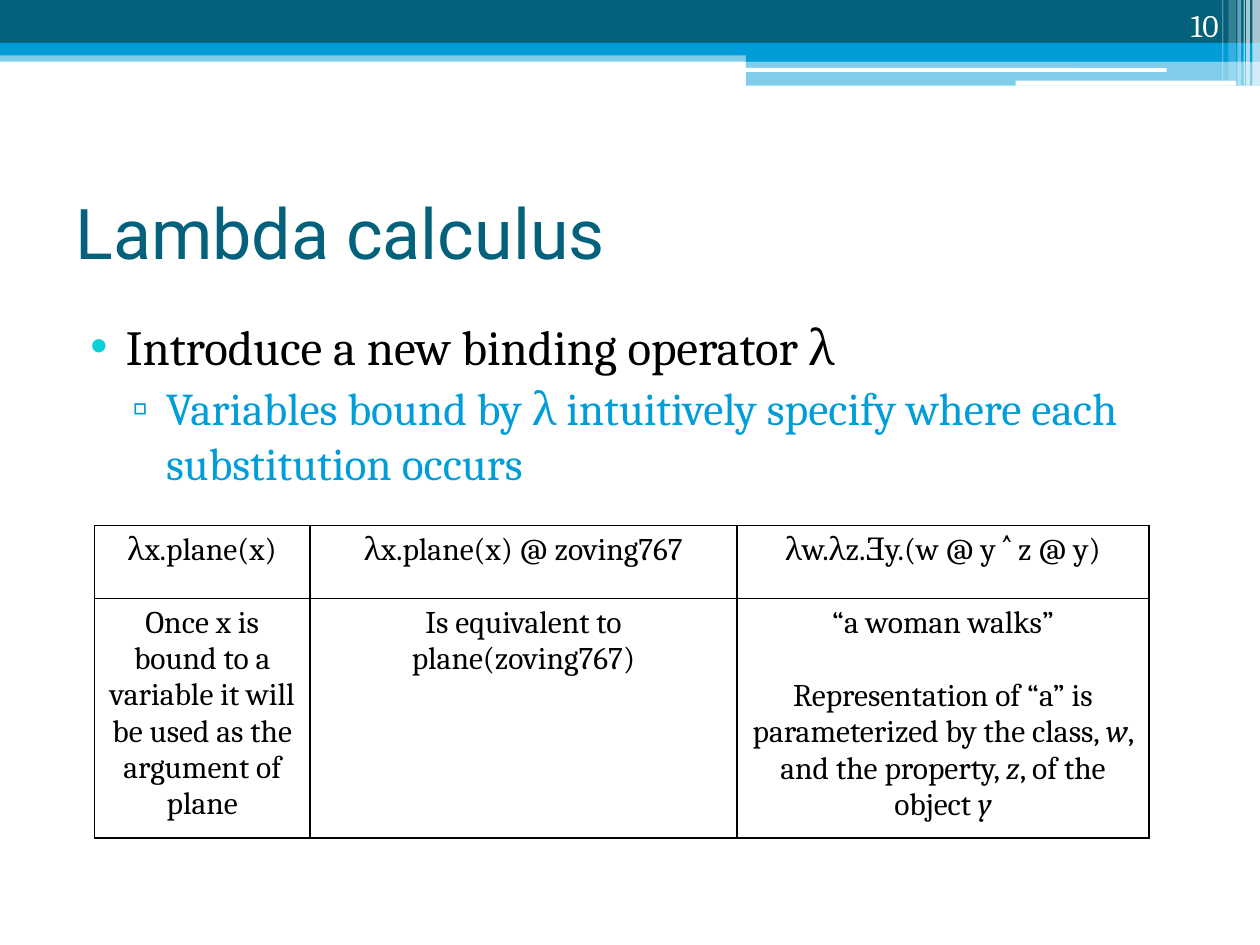
from lxml.etree import SubElement
from pptx import Presentation
from pptx.dml.color import RGBColor
from pptx.enum.shapes import MSO_SHAPE
from pptx.enum.text import MSO_ANCHOR, PP_ALIGN
from pptx.oxml.ns import qn
from pptx.util import Inches, Pt

GRID = Inches(0.1)
COLUMNS, ROWS = 100, 75
TEAL, BLUE, CYAN = "04617B", "009DD9", "0BD0D9"
WHITE, BLACK = "FFFFFF", "000000"
SERIF, SANS = "Cambria", "Roboto"

BANDS = [
    (0, 4, 100, 0.9, BLUE, 50),
    (0, 0, 100, 3.4, TEAL, 100),
    (0, 3.4, 100, 1, BLUE, 100),
    (59.2, 3.9, 40.8, 1, BLUE, 100),
    (59.2, 4.8, 40.8, 2, BLUE, 50),
]
PILLS = [(59.1, 5.4, 33.5, 0.3), (80.6, 6.4, 17.5, 0.4)]
STRIPES = [
    (99.4, 0.6, 6.8, 65),
    (98.9, 0.3, 6.8, 65),
    (98.7, 0.1, 6.8, 60),
    (98.2, 0.3, 6.8, 40),
    (97.5, 0.6, 6.4, 20),
    (97, 0.1, 6.4, 30),
]
POINTS = [
    ("Introduce a new binding operator λ", 0, 28, BLACK, "•", CYAN, 0.4, -0.28),
    ("Variables bound by λ intuitively specify where each substitution occurs",
     1, 26, BLUE, "▫", BLUE, 0.72, -0.27),
]
EXAMPLES = [
    [
        [["λx.plane(x)"]],
        [["λx.plane(x) @ zoving767"]],
        [["λw.λz.Ǝy.(w @ y ˄ z @ y)"]],
    ],
    [
        [["Once x is bound to a variable it will be used as the argument of plane"]],
        [["Is equivalent to plane(zoving767)"]],
        [
            ["“a woman walks”"],
            ["Representation of “a” is parameterized by the class, ", "w",
             ", and the property, ", "z", ", of the object ", "y"],
        ],
    ],
]


def color(value):
    return RGBColor.from_string(value)


def emu(*lengths):
    return [round(length * GRID) for length in lengths]


def add_run(paragraph, text, size, ink, face=SERIF, italic=False):
    run = paragraph.add_run()
    run.text = text
    font = run.font
    font.size, font.name, font.italic = Pt(size), face, italic
    font.color.rgb = color(ink)


def add_frame(slide, box, anchor):
    frame = slide.shapes.add_textbox(*emu(*box)).text_frame
    frame.word_wrap = True
    frame.vertical_anchor = anchor
    return frame


def add_bar(slide, kind, box, fill, opacity=100):
    bar = slide.shapes.add_shape(kind, *emu(*box))
    bar.shadow.inherit = False
    bar.line.fill.background()
    bar.fill.solid()
    bar.fill.fore_color.rgb = color(fill)
    if opacity < 100:
        tone = bar.fill._xPr.find(qn("a:solidFill"))[0]
        SubElement(tone, qn("a:alpha"), val=str(opacity * 1000))


def add_banner(slide, box):
    left, top, _, _ = box
    for x, y, width, height, fill, opacity in BANDS:
        add_bar(slide, MSO_SHAPE.RECTANGLE, (left + x, top + y, width, height), fill, opacity)
    for x, y, width, height in PILLS:
        add_bar(slide, MSO_SHAPE.ROUNDED_RECTANGLE, (left + x, top + y, width, height), WHITE)
    for x, width, height, opacity in STRIPES:
        add_bar(slide, MSO_SHAPE.RECTANGLE, (left + x, top, width, height), WHITE, opacity)


def add_title(slide, box):
    frame = add_frame(slide, box, MSO_ANCHOR.MIDDLE)
    add_run(frame.paragraphs[0], "Lambda calculus", 40, TEAL, SANS)


def add_page_number(slide, box):
    number = add_frame(slide, box, MSO_ANCHOR.BOTTOM).paragraphs[0]
    number.alignment = PP_ALIGN.RIGHT
    add_run(number, "10", 18, WHITE)


def add_bullet(paragraph, mark, tint, margin, indent):
    properties = paragraph._p.get_or_add_pPr()
    properties.set("marL", str(Inches(margin)))
    properties.set("indent", str(Inches(indent)))
    bullet_color = SubElement(properties, qn("a:buClr"))
    SubElement(bullet_color, qn("a:srgbClr"), val=tint)
    SubElement(properties, qn("a:buFont"), typeface="Arial")
    SubElement(properties, qn("a:buChar"), char=mark)


def add_points(slide, box):
    frame = add_frame(slide, box, MSO_ANCHOR.TOP)
    for index, (text, level, size, ink, mark, tint, margin, indent) in enumerate(POINTS):
        point = frame.add_paragraph() if index else frame.paragraphs[0]
        point.level = level
        point.space_before = Pt(3)
        add_bullet(point, mark, tint, margin, indent)
        add_run(point, text, size, ink)


def add_borders(cell):
    properties = cell._tc.get_or_add_tcPr()
    for position, side in enumerate(("a:lnL", "a:lnR", "a:lnT", "a:lnB")):
        border = properties.makeelement(qn(side), {"w": str(Pt(1))})
        stroke = SubElement(border, qn("a:solidFill"))
        SubElement(stroke, qn("a:srgbClr"), val=BLACK)
        properties.insert(position, border)


def fill_cell(cell, paragraphs):
    cell.fill.background()
    add_borders(cell)
    for index, runs in enumerate(paragraphs):
        line = cell.text_frame.add_paragraph() if index else cell.text_frame.paragraphs[0]
        line.alignment = PP_ALIGN.CENTER
        if index:
            line.space_before = Pt(21)
        for order, text in enumerate(runs):
            add_run(line, text, 18, BLACK, italic=order % 2 == 1)


def add_examples(slide, box):
    table = slide.shapes.add_table(len(EXAMPLES), len(EXAMPLES[0]), *emu(*box)).table
    table.first_row = table.horz_banding = False
    for column, width in zip(table.columns, emu(17.1, 33.9, 32.7)):
        column.width = width
    for row, height in zip(table.rows, emu(5.8, box[3] - 5.8)):
        row.height = height
    for row, contents in zip(table.rows, EXAMPLES):
        for cell, paragraphs in zip(row.cells, contents):
            fill_cell(cell, paragraphs)


def main():
    deck = Presentation()
    deck.slide_width, deck.slide_height = emu(COLUMNS, ROWS)
    slide = deck.slides.add_slide(deck.slide_layouts[6])
    add_banner(slide, (0, 0, COLUMNS, 6.8))
    add_title(slide, (5, 12.5, 90, 11.7))
    add_points(slide, (5, 24.6, 90, 47.3))
    add_page_number(slide, (89.4, 0, 8.3, 4))
    add_examples(slide, (7.5, 41.7, 83.7, 24.1))
    deck.save("out.pptx")


if __name__ == "__main__":
    main()
